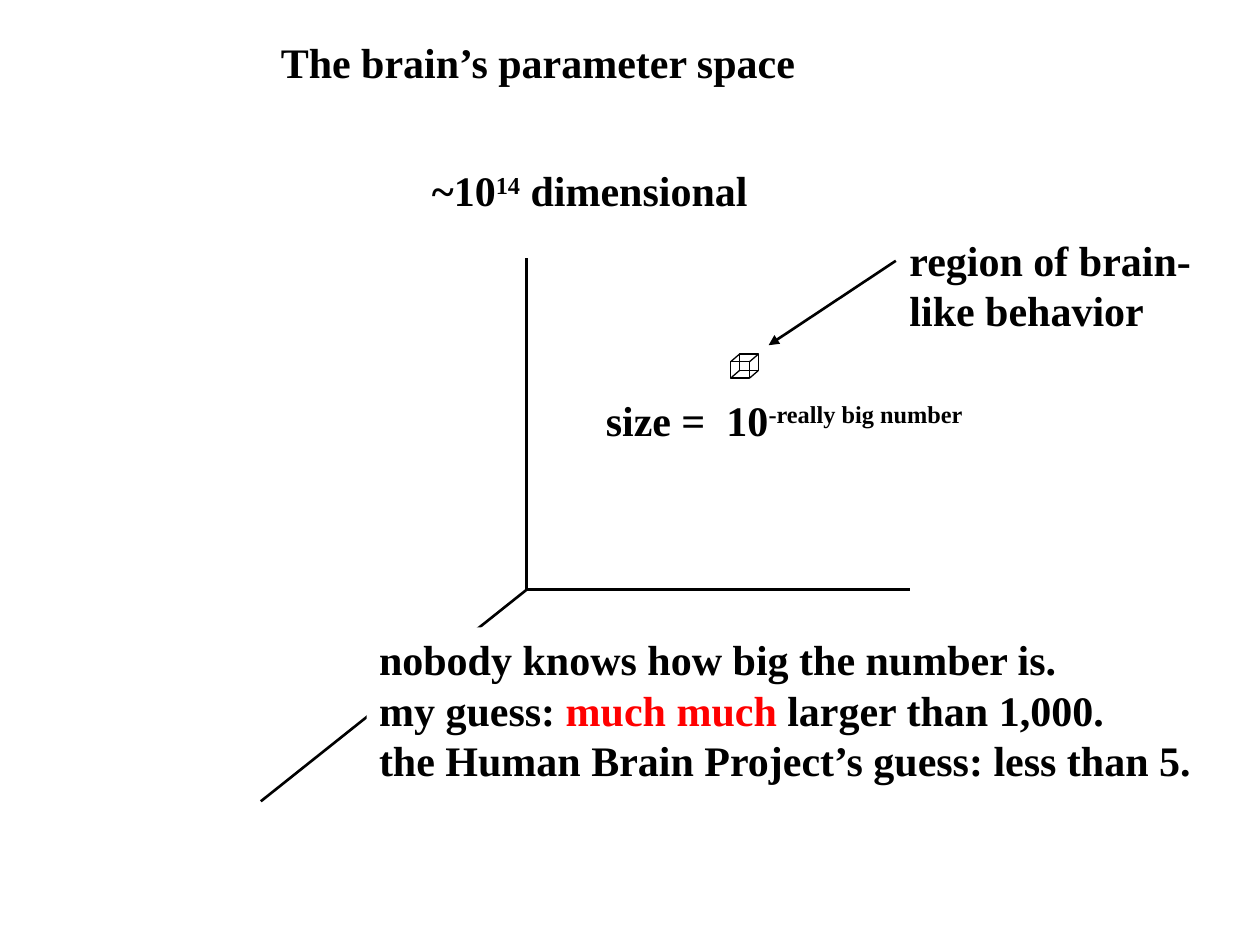
"""Build a slide on the brain's parameter space: axes, a tiny cube and labels."""
from lxml import etree
from pptx import Presentation
from pptx.dml.color import RGBColor
from pptx.enum.shapes import MSO_CONNECTOR, MSO_SHAPE
from pptx.enum.text import MSO_ANCHOR, MSO_AUTO_SIZE, PP_ALIGN
from pptx.oxml.ns import qn
from pptx.util import Inches, Pt

STRAIGHT = MSO_CONNECTOR.STRAIGHT
RECTANGLE = MSO_SHAPE.RECTANGLE
LEFT, CENTER = PP_ALIGN.LEFT, PP_ALIGN.CENTER
TOP = MSO_ANCHOR.TOP
GROW = MSO_AUTO_SIZE.SHAPE_TO_FIT_TEXT
TITLE_ONLY = 5

THEME = {
    "font": "Times New Roman",
    "size": Pt(24),
    "ink": RGBColor(0, 0, 0),
    "accent": RGBColor(255, 0, 0),
    "paper": RGBColor(255, 255, 255),
    "axis": Pt(1.5),
    "cube": Pt(0.75),
}

TITLE = {"box": (2.11, 0.24, 4.32, 0.5), "align": CENTER,
         "lines": [[("The brain’s parameter space", "")]]}
DIMENSIONS = {"box": (3.33, 1.26, 2.76, 0.5),
              "lines": [[("~10", ""), ("14", "super"), (" dimensional", "")]]}
REGION = {"box": (7.12, 1.81, 2.46, 0.91),
          "lines": [[("region of brain-", "")], [("like behavior", "")]]}
GUESSES = {"box": (2.91, 4.98, 6.71, 1.31), "filled": True,
           "lines": [[("nobody knows how big the number is.", "")],
                     [("my guess: ", ""), ("much much", "accent"), (" larger than 1,000.", "")],
                     [("the Human Brain Project’s guess: less than 5.", "")]]}
REGION_SIZE = {"box": (4.71, 3.08, 5, 0.5), "wrap": True,
               "lines": [[("size =  10", ""), ("-really big number", "super")]]}

ORIGIN = (4.18, 4.68)
AXIS_ENDS = [(4.18, 2.05), (7.22, 4.68), (2.07, 6.36)]
POINTER = ((7.11, 2.07), (6.1, 2.74))
CUBE_FRONT = (5.8, 2.87)
CUBE_FACE = (0.15, 0.13)
CUBE_DEPTH = (0.07, -0.06)


def shift(point, offset):
    return point[0] + offset[0], point[1] + offset[1]


def add_line(shapes, start, end, width, arrow=False):
    line = shapes.add_connector(STRAIGHT, *map(Inches, (*start, *end)))
    line.line.color.rgb = THEME["ink"]
    line.line.width = width
    properties = line._element.spPr
    if arrow:
        etree.SubElement(line.line._get_or_add_ln(), qn("a:tailEnd"), type="triangle")
    etree.SubElement(properties, qn("a:effectLst"))


def add_cube(shapes):
    back = shift(CUBE_FRONT, CUBE_DEPTH)
    for corner in (CUBE_FRONT, back):
        face = shapes.add_shape(RECTANGLE, *map(Inches, (*corner, *CUBE_FACE)))
        face.shadow.inherit = False
        face.fill.background()
        face.line.color.rgb = THEME["ink"]
        face.line.width = THEME["cube"]
    for x in (0, CUBE_FACE[0]):
        for y in (0, CUBE_FACE[1]):
            corner = shift(CUBE_FRONT, (x, y))
            add_line(shapes, corner, shift(corner, CUBE_DEPTH), THEME["cube"])


def write(shape, content):
    box = dict(zip(("left", "top", "width", "height"), map(Inches, content["box"])))
    for name, value in box.items():
        setattr(shape, name, value)
    frame = shape.text_frame
    layout = {"word_wrap": content.get("wrap", False), "auto_size": GROW,
              "vertical_anchor": TOP}
    for name, value in layout.items():
        setattr(frame, name, value)
    if content.get("filled"):
        shape.fill.solid()
        shape.fill.fore_color.rgb = THEME["paper"]
    for index, line in enumerate(content["lines"]):
        paragraph = frame.add_paragraph() if index else frame.paragraphs[0]
        paragraph.alignment = content.get("align", LEFT)
        for words, style in line:
            run = paragraph.add_run()
            run.text = words
            for name, value in {"name": THEME["font"], "size": THEME["size"], "bold": True}.items():
                setattr(run.font, name, value)
            run.font.color.rgb = THEME["accent" if style == "accent" else "ink"]
            if style == "super":
                run._r.get_or_add_rPr().set("baseline", "30000")


def add_text(shapes, content):
    write(shapes.add_textbox(*map(Inches, content["box"])), content)


def main():
    deck = Presentation()
    deck.slide_width, deck.slide_height = Inches(10), Inches(7.5)
    slide = deck.slides.add_slide(deck.slide_layouts[TITLE_ONLY])
    shapes = slide.shapes
    write(shapes.title, TITLE)
    for end in AXIS_ENDS:
        add_line(shapes, ORIGIN, end, THEME["axis"])
    add_text(shapes, DIMENSIONS)
    add_cube(shapes.add_group_shape().shapes)
    add_line(shapes, *POINTER, THEME["axis"], arrow=True)
    for content in (REGION, GUESSES, REGION_SIZE):
        add_text(shapes, content)
    deck.save("out.pptx")


if __name__ == "__main__":
    main()
